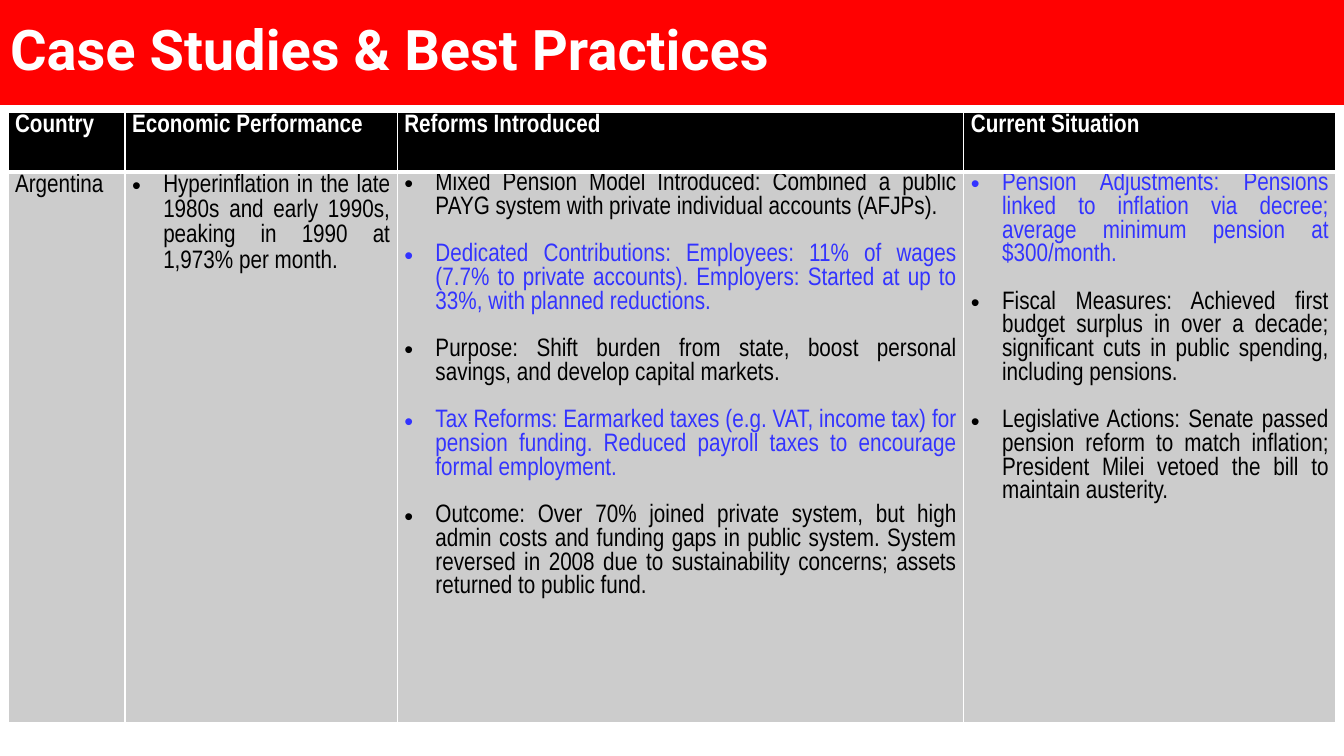
from dataclasses import dataclass
from typing import Any

from lxml.etree import SubElement as add_element
from pptx import Presentation as new_presentation
from pptx.dml.color import RGBColor
from pptx.enum.text import MSO_ANCHOR as Anchor, MSO_AUTO_SIZE as AutoSize, PP_ALIGN as Align
from pptx.oxml.ns import qn
from pptx.util import Inches, Pt

COLORS = {"red": "FF0101", "white": "FFFFFF", "black": "000000", "grey": "CCCCCC", "blue": "3333FF"}
TITLE_FONT = {"name": "Roboto", "size": Pt(40), "bold": True}
HEADER_FONT = {"name": "Arial Narrow", "size": Pt(18), "bold": True}
BODY_FONT = {**HEADER_FONT, "bold": False}
LOOSE = {"alignment": Align.JUSTIFY, "line_spacing": 1.07, "space_after": Pt(8)}
LISTED = {"alignment": Align.JUSTIFY, "line_spacing": 1.0}
ITEM_GAP = Pt(17)
INDENT = Inches(0.31)
CELL_MARGINS = {"margin_left": Inches(0.07), "margin_right": Inches(0.07), "margin_top": 0, "margin_bottom": 0}
ROW_HEIGHTS = (0.59, 5.46)
HEADER_BORDERS = {"lnL": 1, "lnR": 1, "lnT": 1, "lnB": 3}
BODY_BORDERS = {"lnL": 1, "lnR": 1, "lnT": 3, "lnB": 1}


@dataclass(frozen=True)
class Item:
    text: str
    color: str = "black"
    bullet: bool = True


@dataclass(frozen=True)
class Column:
    heading: str
    width: float
    items: tuple[Item, ...]
    layout: dict[str, Any]


COLUMNS = (
    Column("Country", 1.16, (Item("Argentina", bullet=False),), LOOSE),
    Column("Economic Performance", 2.7, (
        Item("Hyperinflation in the late 1980s and early 1990s, peaking in 1990 at 1,973% per month."),
    ), LOOSE),
    Column("Reforms Introduced", 5.62, (
        Item("Mixed Pension Model Introduced: Combined a public PAYG system with private "
             "individual accounts (AFJPs)."),
        Item("Dedicated Contributions: Employees: 11% of wages (7.7% to private accounts). "
             "Employers: Started at up to 33%, with planned reductions.", "blue"),
        Item("Purpose: Shift burden from state, boost personal savings, and develop capital markets."),
        Item("Tax Reforms: Earmarked taxes (e.g. VAT, income tax) for pension funding. "
             "Reduced payroll taxes to encourage formal employment.", "blue"),
        Item("Outcome: Over 70% joined private system, but high admin costs and funding gaps in "
             "public system. System reversed in 2008 due to sustainability concerns; assets "
             "returned to public fund."),
    ), LISTED),
    Column("Current Situation", 3.69, (
        Item("Pension Adjustments: Pensions linked to inflation via decree; average minimum "
             "pension at $300/month.", "blue"),
        Item("Fiscal Measures: Achieved first budget surplus in over a decade; significant cuts "
             "in public spending, including pensions."),
        Item("Legislative Actions: Senate passed pension reform to match inflation; President "
             "Milei vetoed the bill to maintain austerity."),
    ), LISTED),
)


def apply(target: Any, values: dict[str, Any]) -> None:
    for name, value in values.items():
        setattr(target, name, value)


def paint(fill: Any, color: str) -> None:
    fill.solid()
    fill.fore_color.rgb = RGBColor.from_string(COLORS[color])


def write(paragraph: Any, text: str, color: str, font: dict[str, Any], layout: dict[str, Any]) -> None:
    apply(paragraph, layout)
    run = paragraph.add_run()
    run.text = text
    apply(run.font, font)
    run.font.color.rgb = RGBColor.from_string(COLORS[color])


def add_bullet(paragraph: Any) -> None:
    properties = paragraph._p.get_or_add_pPr()
    properties.set("marL", str(INDENT))
    properties.set("indent", str(-INDENT))
    add_element(properties, qn("a:buFont"), typeface="Arial")
    add_element(properties, qn("a:buChar"), char="•")


def format_cell(cell: Any, fill: str, borders: dict[str, int]) -> None:
    apply(cell, CELL_MARGINS)
    properties = cell._tc.get_or_add_tcPr()
    for side, width in borders.items():
        line = add_element(properties, qn(f"a:{side}"), w=str(Pt(width)))
        line_fill = add_element(line, qn("a:solidFill"))
        add_element(line_fill, qn("a:srgbClr"), val=COLORS["white"])
    paint(cell.fill, fill)


def add_title(slide: Any) -> None:
    title = slide.shapes.title
    apply(title, {"left": 0, "top": Inches(-0.01), "width": Inches(13.33), "height": Inches(1.05)})
    paint(title.fill, "red")
    apply(title.text_frame, {"vertical_anchor": Anchor.MIDDLE, "word_wrap": True, "auto_size": AutoSize.NONE})
    write(title.text_frame.paragraphs[0], "Case Studies & Best Practices", "white", TITLE_FONT,
          {"alignment": Align.LEFT, "line_spacing": 0.9})


def add_case_table(slide: Any) -> None:
    table = slide.shapes.add_table(len(ROW_HEIGHTS), len(COLUMNS), Inches(0.08), Inches(1.12),
                                   Inches(13.16), Inches(sum(ROW_HEIGHTS))).table
    for row, height in zip(table.rows, ROW_HEIGHTS):
        row.height = Inches(height)
    for index, column in enumerate(COLUMNS):
        table.columns[index].width = Inches(column.width)
        header, body = table.cell(0, index), table.cell(1, index)
        format_cell(header, "black", HEADER_BORDERS)
        write(header.text_frame.paragraphs[0], column.heading, "white", HEADER_FONT, LOOSE)
        format_cell(body, "grey", BODY_BORDERS)
        for position, item in enumerate(column.items):
            frame = body.text_frame
            paragraph = frame.add_paragraph() if position else frame.paragraphs[0]
            if item.bullet:
                add_bullet(paragraph)
            if position:
                paragraph.space_before = ITEM_GAP
            write(paragraph, item.text, item.color, BODY_FONT, column.layout)


def main() -> None:
    """Build the pension reform case study slide."""
    presentation = new_presentation()
    apply(presentation, {"slide_width": Inches(13.33), "slide_height": Inches(7.5)})
    slide = presentation.slides.add_slide(presentation.slide_layouts[5])
    add_title(slide)
    add_case_table(slide)
    presentation.save("out.pptx")


if __name__ == "__main__":
    main()
